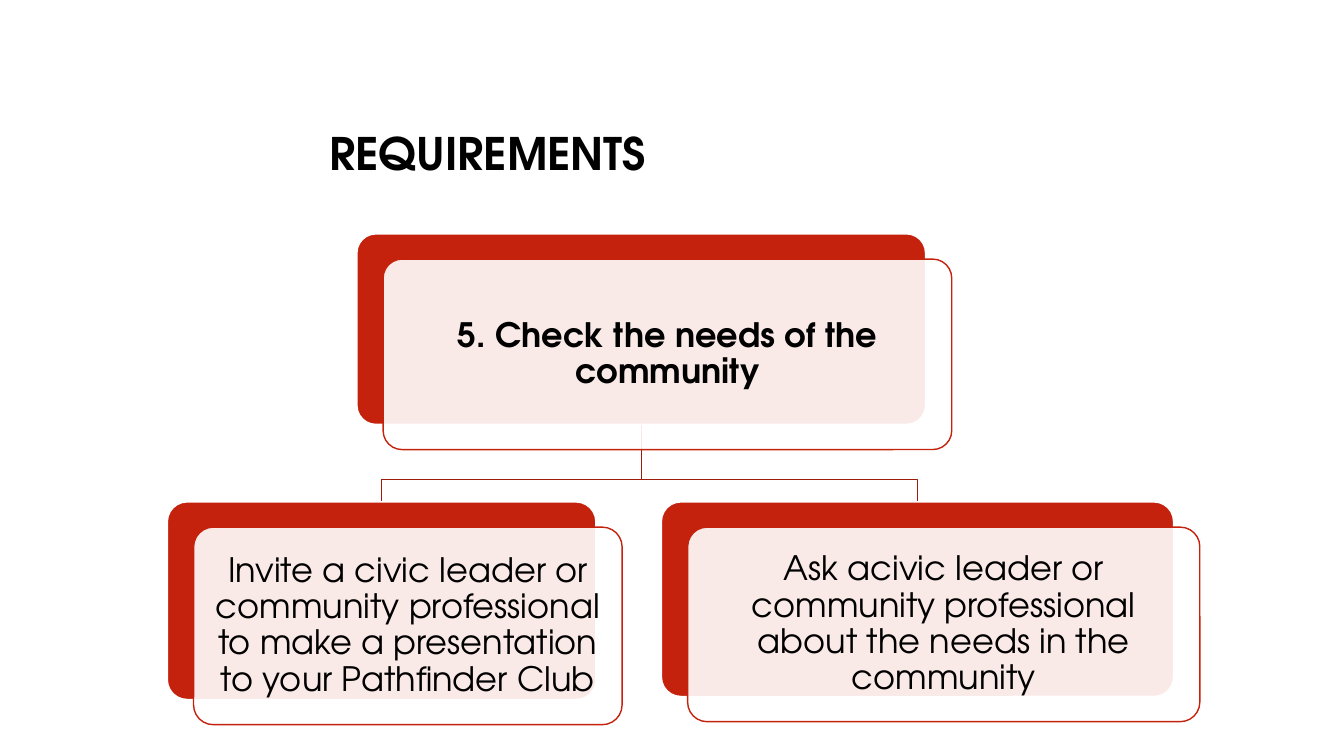
import pptx
import pptx.dml.color
import pptx.enum.shapes
import pptx.enum.text
import pptx.oxml
import pptx.oxml.ns
import pptx.util

Inches = pptx.util.Inches
FONT = "TeX Gyre Adventor"
RED = "C4220D"
DARK_RED = "9D1B0A"
WHITE = "FFFFFF"
BLACK = "000000"
CARD_OFFSET = 0.26
ELBOW_RISE = 0.22


def color(hex_string):
    return pptx.dml.color.RGBColor.from_string(hex_string)


def write_text(shape, text, size=24, bold=False, align="LEFT"):
    frame = shape.text_frame
    frame.word_wrap = True
    frame.vertical_anchor = pptx.enum.text.MSO_ANCHOR.MIDDLE
    paragraph = frame.paragraphs[0]
    paragraph.alignment = getattr(pptx.enum.text.PP_ALIGN, align)
    paragraph.line_spacing = 0.9
    run = paragraph.add_run()
    run.text = text
    run.font.name = FONT
    run.font.size = pptx.util.Pt(size)
    run.font.bold = bold
    run.font.color.rgb = color(BLACK)


def set_line(shape, hex_string):
    shape.shadow.inherit = False
    shape.line.color.rgb = color(hex_string)
    shape.line.width = pptx.util.Pt(1)


def add_panel(slide, box, fill, line, opacity=100):
    shape = slide.shapes.add_shape(
        pptx.enum.shapes.MSO_SHAPE.ROUNDED_RECTANGLE, *map(Inches, box))
    shape.adjustments[0] = 0.1
    set_line(shape, line)
    shape.fill.solid()
    shape.fill.fore_color.rgb = color(fill)
    if opacity < 100:
        fill_color = shape.fill._xPr.find(".//" + pptx.oxml.ns.qn("a:srgbClr"))
        alpha = pptx.oxml.parse_xml(
            "<a:alpha %s val='%d'/>" % (pptx.oxml.ns.nsdecls("a"), opacity * 1000))
        fill_color.append(alpha)
    return shape


def add_card(slide, box, text, bold=False):
    left, top, width, height = box
    add_panel(slide, box, RED, WHITE)
    front = add_panel(
        slide, (left + CARD_OFFSET, top + CARD_OFFSET - 0.01, width, height),
        WHITE, RED, opacity=90)
    frame = front.text_frame
    frame.margin_left = frame.margin_right = Inches(0.1)
    frame.margin_top = frame.margin_bottom = Inches(0.1)
    write_text(front, text, bold=bold, align="CENTER")


def add_elbow(slide, parent_box, child_box):
    left, top, width, height = parent_box
    start_x, start_y = left + width / 2, top + height
    end_x, end_y = child_box[0] + child_box[2] / 2, child_box[1]
    turn_y = end_y - ELBOW_RISE
    builder = slide.shapes.build_freeform(Inches(start_x), Inches(start_y))
    corners = [(start_x, turn_y), (end_x, turn_y), (end_x, end_y)]
    builder.add_line_segments(
        [(Inches(x), Inches(y)) for x, y in corners], close=False)
    elbow = builder.convert_to_shape()
    elbow.fill.background()
    set_line(elbow, DARK_RED)


def add_title(slide, box, text):
    title = slide.shapes.add_textbox(*map(Inches, box))
    write_text(title, text, size=32, bold=True)


def add_hierarchy(slide, box, parent_text, child_texts):
    left, top = box
    parent_box = (left + 1.88, top, 5.64, 1.89)
    child_top = top + 2.66
    child_boxes = [(left, child_top, 4.25, 1.96),
                   (left + 4.9, child_top, 5.08, 1.93)]
    for child_box in reversed(child_boxes):
        add_elbow(slide, parent_box, child_box)
    add_card(slide, parent_box, parent_text, bold=True)
    for child_box, text in zip(child_boxes, child_texts):
        add_card(slide, child_box, text)


def main():
    presentation = pptx.Presentation()
    presentation.slide_width = Inches(13.33)
    presentation.slide_height = Inches(7.5)
    slide = presentation.slides.add_slide(presentation.slide_layouts[6])
    add_title(slide, (3.17, 0.84, 9.42, 1.41), "REQUIREMENTS")
    add_hierarchy(
        slide, (1.66, 2.32), "5. Check the needs of the community",
        ["Invite a civic leader or community professional to make a "
         "presentation to your Pathfinder Club",
         "Ask acivic leader or community professional about the needs in "
         "the community"])
    presentation.save("out.pptx")


if __name__ == "__main__":
    main()
